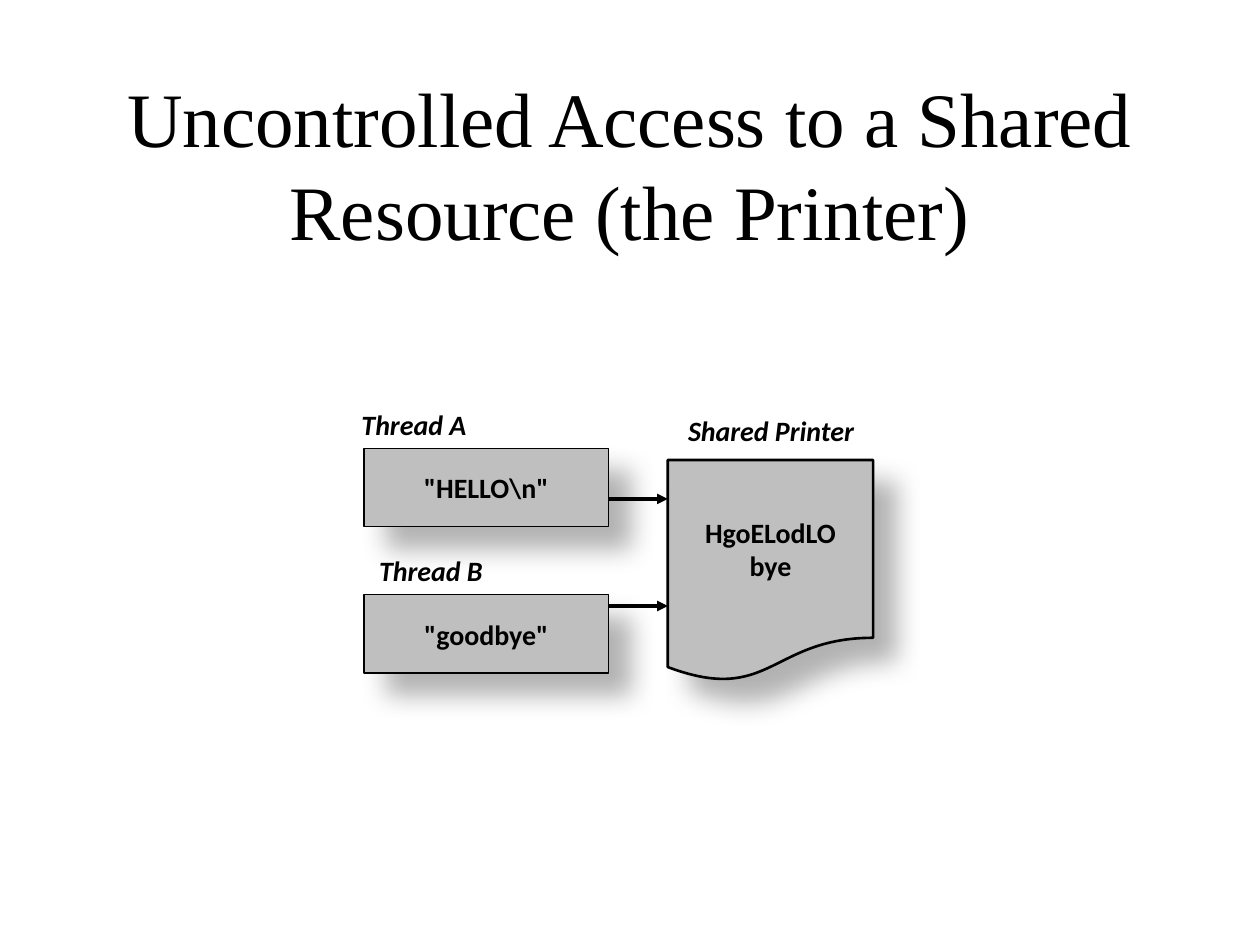
from pptx import Presentation
from pptx import util as u
from pptx.dml.color import RGBColor
from pptx.enum import shapes, text
from pptx.oxml import parse_xml
from pptx.oxml.ns import nsdecls

WIDTH, HEIGHT = u.Inches(10), u.Inches(7.5)
BLACK, GRAY = "000000", "BFBFBF"
LABEL = {"name": "Calibri", "size": u.Pt(16), "bold": True, "italic": True}
CONTENT = {**LABEL, "italic": False}
TITLE = {"name": "Times New Roman", "size": u.Pt(44), "bold": False}

# Diagram positions in percent of the slide's width (x) and height (y)
THREAD_LEFT, THREAD_WIDTH, THREAD_HEIGHT = 28.9, 19.4, 8.27
THREAD_TOP, THREAD_STEP = 47.47, 15.47
PRINTER_LEFT = 53


def color(code):
    return RGBColor.from_string(code)


def x(share):
    return round(WIDTH * share / 100)


def y(share):
    return round(HEIGHT * share / 100)


def area(left, top, width, height):
    return x(left), y(top), x(width), y(height)


def write(shape, lines, style, align=text.PP_ALIGN.CENTER, wrap=True):
    frame = shape.text_frame
    frame.word_wrap = wrap
    frame.auto_size = text.MSO_AUTO_SIZE.NONE
    frame.vertical_anchor = text.MSO_ANCHOR.MIDDLE
    frame.text = "\n".join(lines)
    for para in frame.paragraphs:
        para.alignment = align
        for span in para.runs:
            for name, value in style.items():
                setattr(span.font, name, value)
            span.font.color.rgb = color(BLACK)


def add_title(page, title):
    box = page.shapes.title
    box.left, box.top, box.width, box.height = area(7.5, 8.93, 85, 16.67)
    write(box, [title], TITLE)


def add_label(page, place, label, align=text.PP_ALIGN.CENTER):
    write(page.shapes.add_textbox(*area(*place)), [label], LABEL, align)


def add_box(page, kind, place, lines, line_width, wrap=True):
    box = page.shapes.add_shape(kind, *area(*place))
    box.fill.solid()
    box.fill.fore_color.rgb = color(GRAY)
    box.line.color.rgb = color(BLACK)
    box.line.width = u.Pt(line_width)
    write(box, lines, CONTENT, wrap=wrap)
    add_shadow(box)


def add_shadow(box):
    # Soft shadow towards the lower right
    box.shadow.inherit = False
    effects = box._element.spPr.find(
        "{http://schemas.openxmlformats.org/drawingml/2006/main}effectLst")
    effects.append(parse_xml(
        f'<a:outerShdw {nsdecls("a")} blurRad="{u.Pt(15)}" dist="{u.Pt(18)}" '
        'dir="2700000" algn="tl" rotWithShape="0">'
        f'<a:srgbClr val="{BLACK}"><a:alpha val="30000"/></a:srgbClr>'
        '</a:outerShdw>'))


def add_arrow(page, level):
    arrow = page.shapes.add_connector(
        shapes.MSO_CONNECTOR.STRAIGHT, x(39.2), y(level), x(PRINTER_LEFT), y(level))
    arrow.line.color.rgb = color(BLACK)
    arrow.line.width = u.Pt(2)
    arrow.line._get_or_add_ln().append(
        parse_xml(f'<a:tailEnd {nsdecls("a")} type="triangle"/>'))
    arrow._element.spPr.append(parse_xml(f'<a:effectLst {nsdecls("a")}/>'))


def main():
    deck = Presentation()
    deck.slide_width, deck.slide_height = WIDTH, HEIGHT
    page = deck.slides.add_slide(deck.slide_layouts[5])
    add_title(page, "Uncontrolled Access to a Shared Resource (the Printer)")

    # Arrows start behind the thread boxes
    for level in (52.8, 64.13):
        add_arrow(page, level)

    # Threads and their output
    threads = [
        ("Thread A", 26, text.PP_ALIGN.CENTER, '"HELLO\\n"'),
        ("Thread B", 25.6, text.PP_ALIGN.RIGHT, '"goodbye"'),
    ]
    for row, (name, left, align, output) in enumerate(threads):
        top = THREAD_TOP + row * THREAD_STEP
        add_label(page, (left, top - 6.27, 13.7, 7.33), name, align)
        add_box(page, shapes.MSO_SHAPE.RECTANGLE,
                (THREAD_LEFT, top, THREAD_WIDTH, THREAD_HEIGHT), [output], 0.75)

    # Shared printer
    add_label(page, (50.5, 41.87, 21.4, 7.33), "Shared Printer")
    add_box(page, shapes.MSO_SHAPE.FLOWCHART_DOCUMENT,
            (PRINTER_LEFT, 48.67, 16.3, 23.47), ["HgoELodLO", "bye"], 1.5, wrap=False)

    deck.save("out.pptx")


if __name__ == "__main__":
    main()
